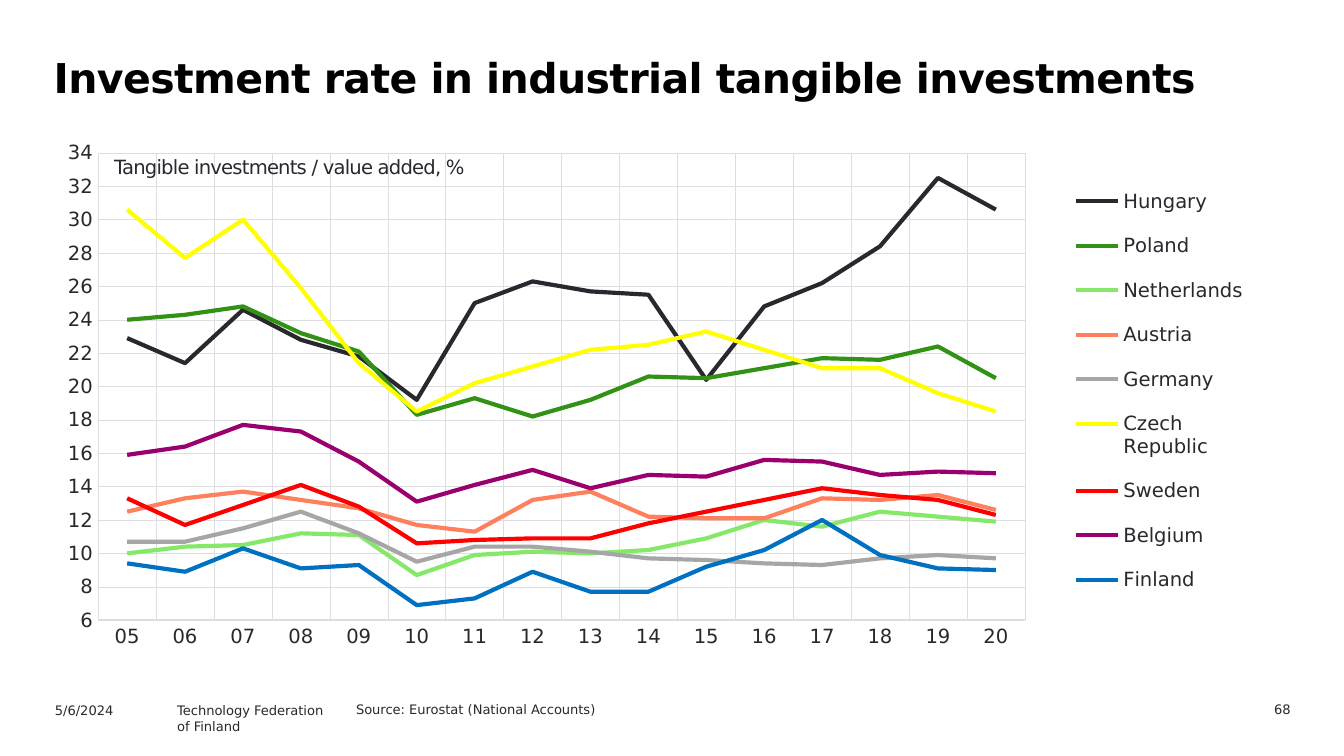
from dataclasses import dataclass

from pptx import Presentation
from pptx.chart.data import CategoryChartData
from pptx.dml.color import RGBColor
from pptx.enum.chart import XL_CHART_TYPE, XL_LEGEND_POSITION, XL_TICK_MARK
from pptx.enum.text import MSO_ANCHOR, MSO_AUTO_SIZE, PP_ALIGN
from pptx.oxml import parse_xml
from pptx.oxml.ns import nsdecls, qn
from pptx.util import Cm, Pt

LINE_CHART = XL_CHART_TYPE.LINE
LEGEND_RIGHT = XL_LEGEND_POSITION.RIGHT
NO_TICKS = XL_TICK_MARK.NONE
LEFT, RIGHT = PP_ALIGN.LEFT, PP_ALIGN.RIGHT

FONT = "DejaVu Sans"
BLACK = RGBColor(0x00, 0x00, 0x00)
INK = RGBColor(0x29, 0x28, 0x2E)
GRID = RGBColor(0xDE, 0xDD, 0xE1)
GREEN = RGBColor(0x32, 0x92, 0x16)
LIGHT_GREEN = RGBColor(0x85, 0xE8, 0x69)
CORAL = RGBColor(0xFF, 0x80, 0x5C)
GREY = RGBColor(0xA6, 0xA6, 0xA6)
YELLOW = RGBColor(0xFF, 0xFF, 0x00)
RED = RGBColor(0xFF, 0x00, 0x00)
PLUM = RGBColor(0x99, 0x00, 0x6E)
BLUE = RGBColor(0x00, 0x70, 0xC0)

TITLE_TEXT = "Investment rate in industrial tangible investments"
YEARS = [f"{year:02d}" for year in range(5, 21)]


@dataclass
class Country:
    name: str
    color: RGBColor
    rates: list[float]


@dataclass
class Label:
    text: str
    left: float
    top: float
    width: float
    height: float = 0.46
    size: float = 7
    align: PP_ALIGN = LEFT


COUNTRIES = [
    Country("Hungary", INK, [22.9, 21.4, 24.6, 22.8, 21.8, 19.2, 25, 26.3,
                             25.7, 25.5, 20.4, 24.8, 26.2, 28.4, 32.5, 30.6]),
    Country("Poland", GREEN, [24, 24.3, 24.8, 23.2, 22.1, 18.3, 19.3, 18.2,
                              19.2, 20.6, 20.5, 21.1, 21.7, 21.6, 22.4, 20.5]),
    Country("Netherlands", LIGHT_GREEN, [10, 10.4, 10.5, 11.2, 11.1, 8.7, 9.9, 10.1,
                                         10, 10.2, 10.9, 12, 11.6, 12.5, 12.2, 11.9]),
    Country("Austria", CORAL, [12.5, 13.3, 13.7, 13.2, 12.7, 11.7, 11.3, 13.2,
                               13.7, 12.2, 12.1, 12.1, 13.3, 13.2, 13.5, 12.6]),
    Country("Germany", GREY, [10.7, 10.7, 11.5, 12.5, 11.2, 9.5, 10.4, 10.4,
                              10.1, 9.7, 9.6, 9.4, 9.3, 9.7, 9.9, 9.7]),
    Country("Czech Republic", YELLOW, [30.6, 27.7, 30, 25.9, 21.4, 18.5, 20.2, 21.2,
                                       22.2, 22.5, 23.3, 22.2, 21.1, 21.1, 19.6, 18.5]),
    Country("Sweden", RED, [13.3, 11.7, 12.9, 14.1, 12.8, 10.6, 10.8, 10.9,
                            10.9, 11.8, 12.5, 13.2, 13.9, 13.5, 13.2, 12.3]),
    Country("Belgium", PLUM, [15.9, 16.4, 17.7, 17.3, 15.5, 13.1, 14.1, 15,
                              13.9, 14.7, 14.6, 15.6, 15.5, 14.7, 14.9, 14.8]),
    Country("Finland", BLUE, [9.4, 8.9, 10.3, 9.1, 9.3, 6.9, 7.3, 8.9,
                              7.7, 7.7, 9.2, 10.2, 12, 9.9, 9.1, 9]),
]

FOOTER = [
    Label("68", 22.25, 13.13, 2.39, align=RIGHT),
    Label("Source: Eurostat (National Accounts)", 6.48, 13.13, 16.41),
    Label("5/6/2024", 0.79, 13.16, 2.54),
    Label("Technology Federation\nof Finland", 3.1, 13.16, 4.57),
]
UNIT_LABEL = Label("Tangible investments / value added, %", 2.06, 2.82, 8.41, 0.66, 10.5)


def style_font(font, size: float, color: RGBColor = INK, bold: bool = False) -> None:
    font.name = FONT
    font.size = Pt(size)
    font.bold = bold
    font.color.rgb = color


def set_tracking(frame, points: float) -> None:
    """Set the space between letters."""
    for para in frame.paragraphs:
        for span in para.runs:
            span.font._element.set("spc", str(round(points * 100)))


def add_title(page) -> None:
    title = page.shapes.title
    title.left, title.top, title.width, title.height = Cm(0.71), Cm(0.79), Cm(22.2), Cm(1.32)
    frame = title.text_frame
    frame.text = TITLE_TEXT
    frame.auto_size = MSO_AUTO_SIZE.NONE
    frame.vertical_anchor = MSO_ANCHOR.MIDDLE
    para = frame.paragraphs[0]
    para.alignment = LEFT
    para.line_spacing = Pt(27)
    para._p.get_or_add_pPr().set("marL", str(Cm(0.05)))
    style_font(para.runs[0].font, 22, BLACK, bold=True)
    set_tracking(frame, -0.3)


def add_label(page, label: Label):
    box = page.shapes.add_textbox(Cm(label.left), Cm(label.top), Cm(label.width), Cm(label.height))
    frame = box.text_frame
    frame.word_wrap = True
    frame.text = label.text
    for para in frame.paragraphs:
        para.alignment = label.align
        for span in para.runs:
            style_font(span.font, label.size)
    return frame


def add_unit_label(page) -> None:
    frame = add_label(page, UNIT_LABEL)
    frame.margin_left = frame.margin_right = Cm(0.1)
    frame.margin_top = frame.margin_bottom = Cm(0.1)
    set_tracking(frame, -0.4)


def place(parent, index: int, x: float, y: float, width: float, height: float,
          inner: bool = False) -> None:
    """Give a chart part a fixed place, in fractions of the chart."""
    for old in parent.findall(qn("c:layout")):
        parent.remove(old)
    target = '<c:layoutTarget val="inner"/>' if inner else ""
    parent.insert(index, parse_xml(
        f'<c:layout {nsdecls("c")}><c:manualLayout>{target}'
        '<c:xMode val="edge"/><c:yMode val="edge"/>'
        f'<c:x val="{x}"/><c:y val="{y}"/><c:w val="{width}"/><c:h val="{height}"/>'
        '</c:manualLayout></c:layout>'))


def style_axis(axis) -> None:
    axis.major_tick_mark = axis.minor_tick_mark = NO_TICKS
    axis.has_major_gridlines = True
    grid = axis.major_gridlines.format.line
    grid.color.rgb = GRID
    grid.width = Pt(0.25)
    style_font(axis.tick_labels.font, 10.5)


def add_investment_chart(page) -> None:
    data = CategoryChartData(number_format="0.0")
    data.categories = YEARS
    for country in COUNTRIES:
        data.add_series(country.name, country.rates)
    chart = page.shapes.add_chart(
        LINE_CHART, Cm(1.04), Cm(2.46), Cm(23.32), Cm(10.26), data).chart
    style_font(chart.font, 10)
    chart.has_title = False
    chart.plots[0].vary_by_categories = False
    for country, series in zip(COUNTRIES, chart.plots[0].series):
        series.smooth = False
        series.format.line.color.rgb = country.color
        series.format.line.width = Pt(2.25)

    years, rates = chart.category_axis, chart.value_axis
    style_axis(years)
    years.format.line.color.rgb = GRID
    years.format.line.width = Pt(0.75)
    style_axis(rates)
    rates.format.line.fill.background()
    rates.minimum_scale, rates.maximum_scale, rates.major_unit = 6, 34, 2
    rates.tick_labels.number_format = "#,##0"
    rates.tick_labels.number_format_is_linked = False

    chart.has_legend = True
    legend = chart.legend
    legend.position = LEGEND_RIGHT
    legend.include_in_layout = False
    style_font(legend.font, 10.5)
    place(legend._element, 1, 0.82, 0.07, 0.15, 0.82)
    place(chart._chartSpace.chart.plotArea, 0, 0.035, 0.042, 0.751, 0.861, inner=True)


def main() -> None:
    deck = Presentation()
    deck.slide_width, deck.slide_height = Cm(25.4), Cm(14.29)
    page = deck.slides.add_slide(deck.slide_layouts[5])
    add_title(page)
    add_investment_chart(page)
    add_unit_label(page)
    for label in FOOTER:
        add_label(page, label)
    deck.save("out.pptx")


if __name__ == "__main__":
    main()
